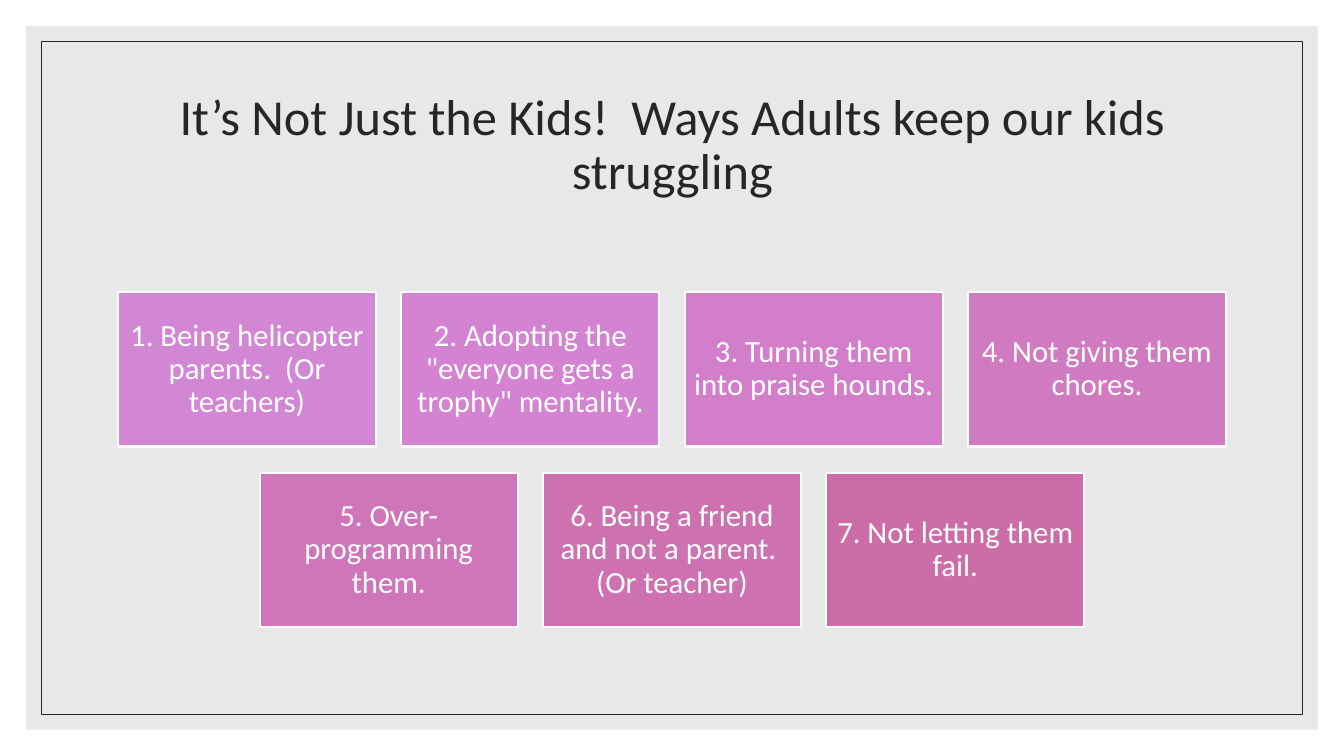
from dataclasses import dataclass

from lxml import etree
from pptx import Presentation
from pptx.dml.color import RGBColor
from pptx.enum.shapes import MSO_SHAPE
from pptx.enum.text import MSO_ANCHOR, MSO_AUTO_SIZE, PP_ALIGN
from pptx.oxml.ns import qn
from pptx.util import Inches, Pt

RECT = MSO_SHAPE.RECTANGLE
MIDDLE = MSO_ANCHOR.MIDDLE
CENTER = PP_ALIGN.CENTER
NO_FIT = MSO_AUTO_SIZE.NONE

WIDTH, HEIGHT = 13.33, 7.5
CARD_W, CARD_H, GAP = 2.56, 1.53, 0.25
TOP, ROW_STEP = 2.9, 1.79


@dataclass(frozen=True)
class Theme:
    font: str = "Calibri"
    title_size: int = 36
    card_size: int = 22
    ink: str = "262626"
    paper: str = "FFFFFF"
    panel: str = "D9D9D9"
    panel_alpha: int = 60


ROWS = [
    [
        ("1. Being helicopter parents.  (Or teachers)", "D287D5"),
        ('2. Adopting the "everyone gets a trophy" mentality.', "D383D1"),
        ("3. Turning them into praise hounds.", "D27ECA"),
        ("4. Not giving them chores.", "D07AC2"),
    ],
    [
        ("5. Over-programming them.", "CF76BA"),
        ("6. Being a friend and not a parent.  (Or teacher)", "CD71B1"),
        ("7. Not letting them fail.", "CC6DA8"),
    ],
]


class Board:
    def __init__(self, slide, theme):
        self.slide = slide
        self.theme = theme
        back = slide.background.fill
        back.solid()
        back.fore_color.rgb = RGBColor.from_string(theme.paper)

    def box(self, left, top, width, height, fill=None, line=None, weight=1):
        shape = self.slide.shapes.add_shape(
            RECT, Inches(left), Inches(top), Inches(width), Inches(height))
        shape.shadow.inherit = False
        if fill:
            shape.fill.solid()
            shape.fill.fore_color.rgb = RGBColor.from_string(fill)
        else:
            shape.fill.background()
        if line:
            shape.line.color.rgb = RGBColor.from_string(line)
            shape.line.width = Pt(weight)
        else:
            shape.line.fill.background()
        return shape

    def inset(self, margin, fill=None, line=None, weight=1):
        """Draw a box at an equal margin from every slide edge."""
        return self.box(margin, margin, WIDTH - 2 * margin,
                        HEIGHT - 2 * margin, fill, line, weight)

    def panel(self, margin):
        shape = self.inset(margin, self.theme.panel)
        color = shape.element.spPr.find(qn("a:solidFill"))[0]
        alpha = etree.SubElement(color, qn("a:alpha"))
        alpha.set("val", str(self.theme.panel_alpha * 1000))

    def label(self, shape, text, size, color):
        frame = shape.text_frame
        frame.text = text
        frame.word_wrap = True
        frame.auto_size = NO_FIT
        frame.vertical_anchor = MIDDLE
        para = frame.paragraphs[0]
        para.alignment = CENTER
        para.line_spacing = 0.9
        para.font.name = self.theme.font
        para.font.size = Pt(size)
        para.font.color.rgb = RGBColor.from_string(color)
        return frame

    def title(self, text, left, top, width, height):
        """Place the title in front of the panel and frame."""
        shape = self.slide.shapes.title
        shape.left, shape.top = Inches(left), Inches(top)
        shape.width, shape.height = Inches(width), Inches(height)
        self.label(shape, text, self.theme.title_size, self.theme.ink)
        shape.element.getparent().append(shape.element)

    def card(self, text, fill, left, top):
        shape = self.box(left, top, CARD_W, CARD_H, fill, self.theme.paper, 1.5)
        frame = self.label(shape, text, self.theme.card_size, self.theme.paper)
        frame.margin_left = frame.margin_right = Inches(0.09)
        frame.margin_top = frame.margin_bottom = Inches(0.09)

    def row(self, cards, top):
        """Centre one row of cards on the slide."""
        step = CARD_W + GAP
        start = (WIDTH - len(cards) * step + GAP) / 2
        for i, (text, fill) in enumerate(cards):
            self.card(text, fill, start + i * step, top)


def main():
    deck = Presentation()
    deck.slide_width, deck.slide_height = Inches(WIDTH), Inches(HEIGHT)
    theme = Theme()
    board = Board(deck.slides.add_slide(deck.slide_layouts[5]), theme)
    board.panel(0.26)
    board.inset(0.41, line=theme.ink, weight=0.5)
    board.title("It’s Not Just the Kids!  Ways Adults keep our kids struggling",
                1.17, 0.7, 11, 1.5)
    for i, cards in enumerate(ROWS):
        board.row(cards, TOP + i * ROW_STEP)
    deck.save("out.pptx")


if __name__ == "__main__":
    main()
